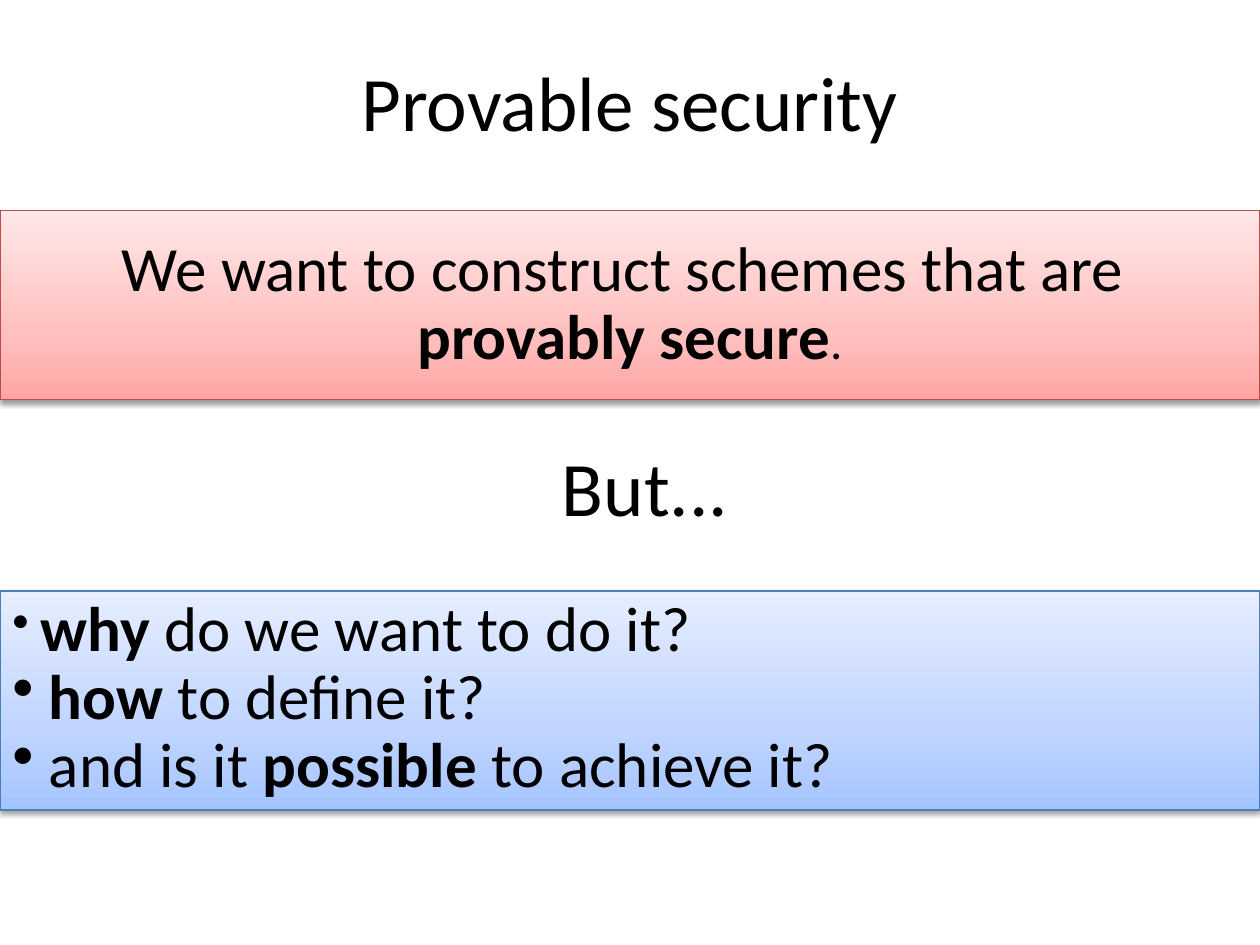
from dataclasses import dataclass

from lxml.etree import SubElement
from pptx import Presentation
from pptx.dml.color import RGBColor
from pptx.enum.shapes import MSO_SHAPE
from pptx.enum.text import MSO_ANCHOR, PP_ALIGN
from pptx.oxml.ns import qn
from pptx.shapes.autoshape import Shape
from pptx.slide import Slide
from pptx.text.text import TextFrame
from pptx.util import Inches, Pt

FONT = "Calibri"
TEXT_COLOR = "000000"
GRADIENT_POSITIONS = (0, 35, 100)


@dataclass(frozen=True)
class TextRun:
    text: str
    bold: bool = False
    size: int = 36


@dataclass(frozen=True)
class Panel:
    top: float
    height: float
    gradient: tuple[str, str, str]
    line: str
    paragraphs: list[list[TextRun]]
    bulleted: bool = False


@dataclass(frozen=True)
class Heading:
    text: str
    left: float
    top: float
    width: float
    height: float
    anchor: MSO_ANCHOR
    line_spacing: float = 1.0
    space_before: float = 0


HEADINGS = [
    Heading("Provable security", 0.5, 0.17, 9, 1.25, MSO_ANCHOR.MIDDLE),
    Heading("But...", 1.02, 3.52, 8.2, 0.78, MSO_ANCHOR.TOP, 0.9, 8.8),
]

PANELS = [
    Panel(
        1.67, 1.5, ("FFA6A5", "FFC0BF", "FFE7E7"), "BF4C48",
        [
            [TextRun("We want to construct schemes that are ")],
            [TextRun("provably secure", bold=True), TextRun(".", size=28)],
        ],
    ),
    Panel(
        4.69, 1.74, ("A4C4FF", "BFD4FF", "E6EEFF"), "4B7EBC",
        [
            [TextRun(" ", bold=True, size=28), TextRun("why", bold=True), TextRun(" do we want to do it?")],
            [TextRun(" how ", bold=True), TextRun("to define it?")],
            [TextRun(" and is it "), TextRun("possible ", bold=True), TextRun("to achieve it?")],
        ],
        bulleted=True,
    ),
]


def color(value: str) -> RGBColor:
    return RGBColor.from_string(value)


def set_gradient(shape: Shape, colors: tuple[str, str, str]) -> None:
    """Fill from bottom to top with one stop per colour."""
    shape.fill.gradient()
    shape.fill.gradient_angle = 90
    stops = shape._element.spPr.find(".//" + qn("a:gsLst"))
    stops.clear()
    for position, value in zip(GRADIENT_POSITIONS, colors):
        stop = SubElement(stops, qn("a:gs"), pos=str(position * 1000))
        SubElement(stop, qn("a:srgbClr"), val=value)


def add_shadow(shape: Shape) -> None:
    shape.shadow.inherit = False
    effects = shape._element.spPr.find(qn("a:effectLst"))
    shadow = SubElement(
        effects, qn("a:outerShdw"), blurRad=str(Pt(3.1)), dist=str(Pt(1.6)),
        dir=str(90 * 60000), rotWithShape="0",
    )
    shadow_color = SubElement(shadow, qn("a:srgbClr"), val="000000")
    SubElement(shadow_color, qn("a:alpha"), val="38000")


def write_paragraphs(frame: TextFrame, panel: Panel) -> None:
    for index, text_runs in enumerate(panel.paragraphs):
        paragraph = frame.add_paragraph() if index else frame.paragraphs[0]
        paragraph.alignment = PP_ALIGN.LEFT if panel.bulleted else PP_ALIGN.CENTER
        paragraph.line_spacing = 0.9
        paragraph.font.name = FONT
        paragraph.font.color.rgb = color(TEXT_COLOR)
        if panel.bulleted:
            properties = paragraph._p.get_or_add_pPr()
            bullet = properties.makeelement(qn("a:buChar"), {"char": "•"})
            properties.find(qn("a:defRPr")).addprevious(bullet)
        for text_run in text_runs:
            run = paragraph.add_run()
            run.text = text_run.text
            run.font.name = FONT
            run.font.size = Pt(text_run.size)
            run.font.bold = text_run.bold
            run.font.color.rgb = color(TEXT_COLOR)


def add_panel(slide: Slide, panel: Panel) -> None:
    shape = slide.shapes.add_shape(
        MSO_SHAPE.RECTANGLE, 0, Inches(panel.top), Inches(10), Inches(panel.height)
    )
    set_gradient(shape, panel.gradient)
    shape.line.color.rgb = color(panel.line)
    shape.line.width = Pt(0.75)
    add_shadow(shape)
    frame = shape.text_frame
    frame.word_wrap = panel.bulleted
    frame.vertical_anchor = MSO_ANCHOR.TOP if panel.bulleted else MSO_ANCHOR.MIDDLE
    write_paragraphs(frame, panel)


def add_heading(slide: Slide, heading: Heading) -> None:
    box = slide.shapes.add_textbox(
        Inches(heading.left), Inches(heading.top), Inches(heading.width), Inches(heading.height)
    )
    frame = box.text_frame
    frame.word_wrap = True
    frame.vertical_anchor = heading.anchor
    paragraph = frame.paragraphs[0]
    paragraph.text = heading.text
    paragraph.alignment = PP_ALIGN.CENTER
    paragraph.line_spacing = heading.line_spacing
    paragraph.space_before = Pt(heading.space_before)
    paragraph.font.name = FONT
    paragraph.font.size = Pt(44)
    paragraph.font.color.rgb = color(TEXT_COLOR)


def main() -> None:
    presentation = Presentation()
    presentation.slide_width = Inches(10)
    presentation.slide_height = Inches(7.5)
    slide = presentation.slides.add_slide(presentation.slide_layouts[6])
    for panel, heading in zip(PANELS, HEADINGS):
        add_heading(slide, heading)
        add_panel(slide, panel)
    presentation.save("out.pptx")


if __name__ == "__main__":
    main()
